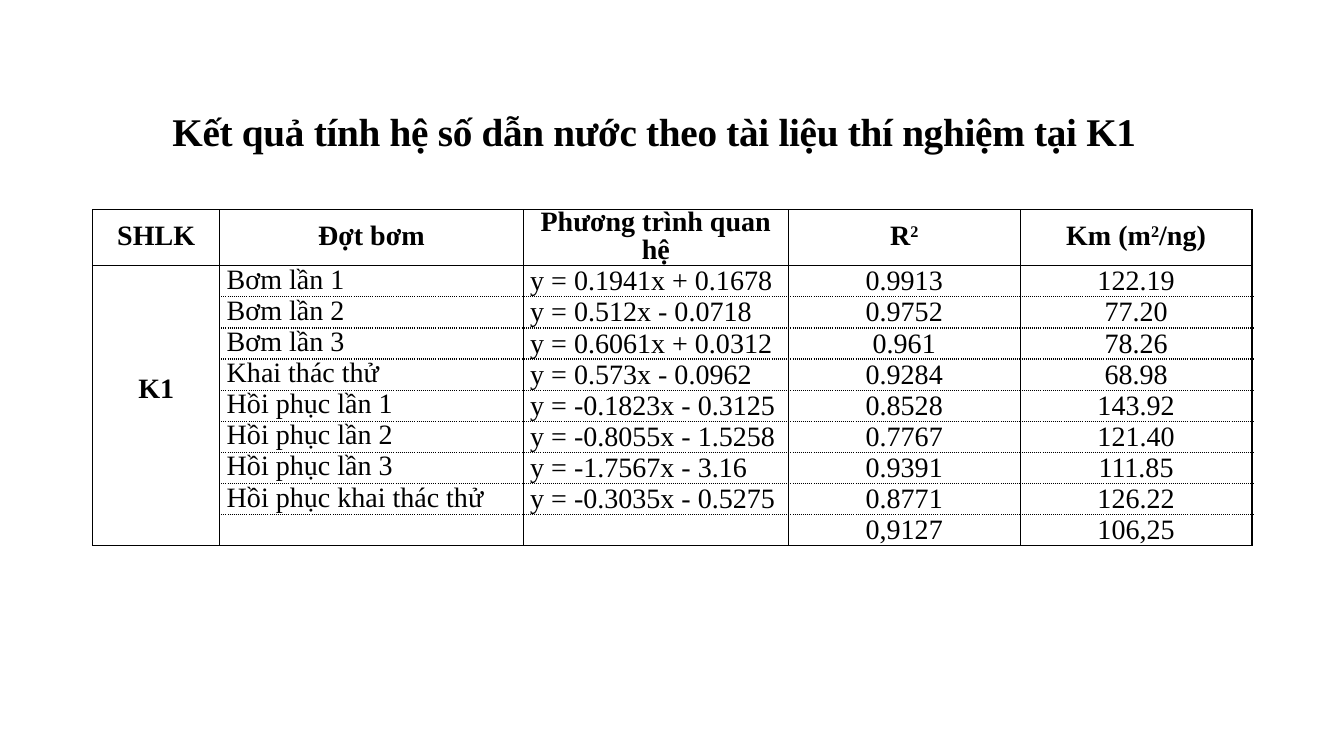
from dataclasses import dataclass

from lxml.etree import SubElement
from pptx import Presentation
from pptx.dml.color import RGBColor
from pptx.enum.text import MSO_ANCHOR as Anchor, MSO_AUTO_SIZE as AutoSize, PP_ALIGN as Align
from pptx.oxml.ns import qn
from pptx.util import Inches, Pt


@dataclass(frozen=True)
class Theme:
    font: str = "Times New Roman"
    ink: str = "000000"
    title_size: int = 28
    body_size: int = 20
    line_spacing: int = 20
    border: float = 1


@dataclass(frozen=True)
class Grid:
    width: int
    height: int
    divisions: int = 100

    def x(self, columns: float) -> int:
        return round(self.width * columns / self.divisions)

    def y(self, rows: float) -> int:
        return round(self.height * rows / self.divisions)


@dataclass(frozen=True)
class Column:
    heading: tuple[str, ...]
    width: float
    align: Align
    fixed_spacing: bool


@dataclass(frozen=True)
class Pumping:
    stage: str
    equation: str
    r_squared: str
    km: str


THEME = Theme()
GRID = Grid(Inches(13.33), Inches(7.5))
SUPERSCRIPT = "2"
HEADING_HEIGHT, PUMPING_HEIGHT = 7.4, 4.12

COLUMNS = [
    Column(("SHLK",), 9.45, Align.CENTER, True),
    Column(("Đợt bơm",), 22.58, Align.LEFT, True),
    Column(("Phương trình quan hệ",), 19.73, Align.LEFT, False),
    Column(("R", SUPERSCRIPT), 17.25, Align.CENTER, False),
    Column(("Km (m", SUPERSCRIPT, "/ng)"), 17.25, Align.CENTER, False),
]

PUMPINGS = [
    Pumping("Bơm lần 1", "y = 0.1941x + 0.1678", "0.9913", "122.19"),
    Pumping("Bơm lần 2", "y = 0.512x - 0.0718", "0.9752", "77.20"),
    Pumping("Bơm lần 3", "y = 0.6061x + 0.0312", "0.961", "78.26"),
    Pumping("Khai thác thử", "y = 0.573x - 0.0962", "0.9284", "68.98"),
    Pumping("Hồi phục lần 1", "y = -0.1823x - 0.3125", "0.8528", "143.92"),
    Pumping("Hồi phục lần 2", "y = -0.8055x - 1.5258", "0.7767", "121.40"),
    Pumping("Hồi phục lần 3", "y = -1.7567x - 3.16", "0.9391", "111.85"),
    Pumping("Hồi phục khai thác thử", "y = -0.3035x - 0.5275", "0.8771", "126.22"),
    Pumping("", "", "0,9127", "106,25"),
]


def add_run(paragraph, text: str, size: int, bold: bool):
    run = paragraph.add_run()
    run.text = text
    run.font.name = THEME.font
    run.font.size = Pt(size)
    run.font.bold = bold
    run.font.color.rgb = RGBColor.from_string(THEME.ink)
    return run


def set_borders(cell, dashes: dict[str, str | None]) -> None:
    properties = cell._tc.get_or_add_tcPr()
    for position, side in enumerate("LRTB"):
        line = SubElement(properties, qn(f"a:ln{side}"), w=str(Pt(THEME.border)))
        dash = dashes[side]
        if dash is None:
            SubElement(line, qn("a:noFill"))
        else:
            fill = SubElement(line, qn("a:solidFill"))
            SubElement(fill, qn("a:srgbClr"), val=THEME.ink)
            SubElement(line, qn("a:prstDash"), val=dash)
        properties.insert(position, line)


def fill_cell(cell, pieces: tuple[str, ...], align: Align, bold: bool, fixed_spacing: bool) -> None:
    cell.vertical_anchor = Anchor.MIDDLE
    cell.margin_left = cell.margin_right = Inches(0.07)
    cell.margin_top = cell.margin_bottom = 0
    cell.fill.background()
    paragraph = cell.text_frame.paragraphs[0]
    paragraph.alignment = align
    if fixed_spacing:
        paragraph.line_spacing = Pt(THEME.line_spacing)
    for piece in filter(None, pieces):
        run = add_run(paragraph, piece, THEME.body_size, bold)
        if piece == SUPERSCRIPT:
            run.font._element.set("baseline", "30000")


def add_title(slide, text: str) -> None:
    title = slide.shapes.title
    title.left, title.top = GRID.x(8.33), GRID.y(12.67)
    title.width, title.height = GRID.x(77.04), GRID.y(11.73)
    frame = title.text_frame
    frame.auto_size = AutoSize.NONE
    frame.word_wrap = True
    frame.vertical_anchor = Anchor.MIDDLE
    paragraph = frame.paragraphs[0]
    paragraph.alignment = Align.LEFT
    paragraph.line_spacing = Pt(THEME.line_spacing)
    indents = paragraph._p.get_or_add_pPr()
    indents.set("marL", "0")
    indents.set("indent", str(Inches(0.5)))
    run = add_run(paragraph, text, THEME.title_size, True)
    run.font._element.set("spc", "-20")


def add_results(slide, well: str) -> None:
    last = len(PUMPINGS)
    heights = [HEADING_HEIGHT] + [PUMPING_HEIGHT] * last
    results = slide.shapes.add_table(
        last + 1, len(COLUMNS), GRID.x(6.9), GRID.y(27.73),
        GRID.x(sum(column.width for column in COLUMNS)), GRID.y(sum(heights)),
    ).table
    results.first_row = results.horz_banding = False
    for row, height in zip(results.rows, heights):
        row.height = GRID.y(height)

    for index, column in enumerate(COLUMNS):
        results.columns[index].width = GRID.x(column.width)
        heading = results.cell(0, index)
        fill_cell(heading, column.heading, Align.CENTER, True, True)
        set_borders(heading, dict.fromkeys("LRTB", "solid"))
        inner = "dot" if index else None
        for number, pumping in enumerate(PUMPINGS, 1):
            label = well if number == 1 else ""
            values = (label, pumping.stage, pumping.equation, pumping.r_squared, pumping.km)
            cell = results.cell(number, index)
            fill_cell(cell, (values[index],), column.align, index == 0, column.fixed_spacing)
            set_borders(cell, {
                "L": "solid",
                "R": "solid",
                "T": "solid" if number == 1 else inner,
                "B": "solid" if number == last else inner,
            })
    results.cell(1, 0).merge(results.cell(last - 1, 0))


def main() -> None:
    presentation = Presentation()
    presentation.slide_width, presentation.slide_height = GRID.width, GRID.height
    slide = presentation.slides.add_slide(presentation.slide_layouts[5])
    add_title(slide, "Kết quả tính hệ số dẫn nước theo tài liệu thí nghiệm tại K1")
    add_results(slide, "K1")
    presentation.save("out.pptx")


if __name__ == "__main__":
    main()
